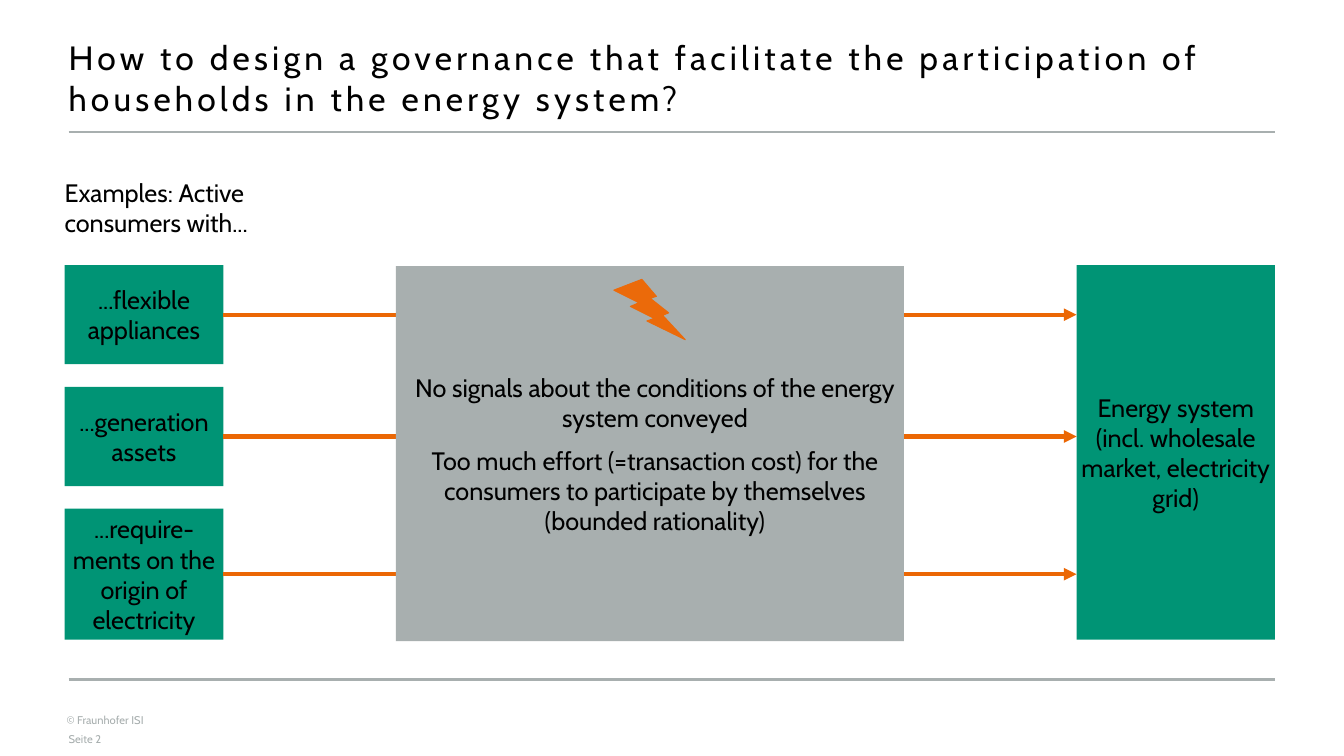
from pptx import Presentation
from pptx.dml.color import RGBColor
from pptx.enum.shapes import MSO_CONNECTOR, MSO_SHAPE
from pptx.enum.text import MSO_ANCHOR, PP_ALIGN
from pptx.oxml.ns import qn
from pptx.util import Cm, Pt
from lxml import etree

RECT, BOLT = MSO_SHAPE.RECTANGLE, MSO_SHAPE.LIGHTNING_BOLT
LINE = MSO_CONNECTOR.STRAIGHT
TOP, MIDDLE = MSO_ANCHOR.TOP, MSO_ANCHOR.MIDDLE
LEFT, CENTER = PP_ALIGN.LEFT, PP_ALIGN.CENTER

BLACK = RGBColor(0x00, 0x00, 0x00)
GREEN = RGBColor(0x00, 0x94, 0x75)
GREY = RGBColor(0xA8, 0xAF, 0xAF)
ORANGE = RGBColor(0xEB, 0x67, 0x04)
FLASH = RGBColor(0xEB, 0x6A, 0x0A)
FONT = "Cabin"

EDGE, RIGHT = Cm(1.73), Cm(32.13)
SIDE, FIRST, GAP = Cm(1.63), Cm(6.68), Cm(0.57)
ASSETS = [
    ("...flexible appliances", Cm(2.5)),
    ("...generation assets", Cm(2.5)),
    ("...require-ments on the origin of electricity", Cm(3.3)),
]


def write(shape, texts, size=18, color=BLACK, align=CENTER, anchor=MIDDLE):
    """Fill a shape with paragraphs, without inner margins."""
    frame = shape.text_frame
    frame.word_wrap = True
    frame.vertical_anchor = anchor
    frame.margin_left = frame.margin_right = 0
    frame.margin_top = frame.margin_bottom = 0
    for i, text in enumerate(texts):
        para = frame.paragraphs[0] if i == 0 else frame.add_paragraph()
        para.text = text
        para.alignment = align
        if i:
            para.space_before = Pt(9)
        font = para.font
        font.name, font.size = FONT, Pt(size)
        font.color.rgb = color
    return frame


def add_label(slide, box, text, size, color=BLACK, anchor=TOP):
    label = slide.shapes.add_textbox(*box)
    return write(label, [text], size, color, LEFT, anchor)


def add_block(slide, box, fill, texts=(), kind=RECT):
    block = slide.shapes.add_shape(kind, *box)
    block.shadow.inherit = False
    block.fill.solid()
    block.fill.fore_color.rgb = fill
    block.line.fill.background()
    write(block, texts)
    return block


def add_line(slide, start, end, color, width):
    line = slide.shapes.add_connector(LINE, *start, *end)
    line.line.color.rgb = color
    line.line.width = Pt(width)
    etree.SubElement(line._element.spPr, qn("a:effectLst"))
    return line


def add_arrow(slide, block, end):
    mid = block.top + block.height // 2
    arrow = add_line(slide, (block.left + block.width, mid), (end, mid),
                     ORANGE, 3)
    arrow.begin_connect(block, 3)
    tip = etree.SubElement(arrow.line._get_or_add_ln(), qn("a:tailEnd"))
    tip.set("type", "triangle")


def main():
    deck = Presentation()
    deck.slide_width, deck.slide_height = Cm(33.87), Cm(19.05)
    slide = deck.slides.add_slide(deck.slide_layouts[6])

    # Title and rules
    title = add_label(
        slide, (EDGE, Cm(0.94), RIGHT - EDGE, Cm(2.06)),
        "How to design a governance that facilitate the participation of "
        "households in the energy system?", 24)
    title.paragraphs[0].runs[0].font._element.set("spc", "300")
    for y, width in ((Cm(3.33), 1), (Cm(17.12), 2.5)):
        add_line(slide, (EDGE, y), (RIGHT, y), GREY, width)

    # Footer
    add_label(slide, (Cm(1.68), Cm(17.98), Cm(3.33), Cm(0.33)),
              "© Fraunhofer ISI", 8, GREY, MIDDLE)
    add_label(slide, (EDGE, Cm(18.45), Cm(6.65), Cm(0.33)),
              "Seite 2", 8, GREY, MIDDLE)

    # Energy system
    system = add_block(
        slide, (Cm(27.13), FIRST, Cm(5), Cm(9.44)), GREEN,
        ["Energy system\v(incl. wholesale market, electricity grid)"])

    # Consumers, each with an arrow to the energy system
    add_label(slide, (SIDE, Cm(4.32), Cm(5.2), Cm(1.8)),
              "Examples: Active consumers with...", 18, anchor=MIDDLE)
    top = FIRST
    for text, height in ASSETS:
        block = add_block(slide, (SIDE, top, Cm(4), height), GREEN, [text])
        add_arrow(slide, block, system.left)
        top += height + GAP

    # Barrier across the arrows
    barrier = add_block(
        slide, (Cm(9.98), Cm(6.71), Cm(12.8), Cm(9.45)), GREY,
        ["No signals about the conditions of the energy system conveyed",
         "Too much effort (=transaction cost) for the consumers to "
         "participate by themselves (bounded rationality)"])
    barrier.text_frame.margin_left = Cm(0.25)
    flash = add_block(slide, (Cm(15.47), Cm(7.04), Cm(1.8), Cm(1.52)),
                      FLASH, kind=BOLT)
    flash.line.color.rgb = FLASH
    flash.line.width = Pt(0.75)

    deck.save("out.pptx")


if __name__ == "__main__":
    main()
